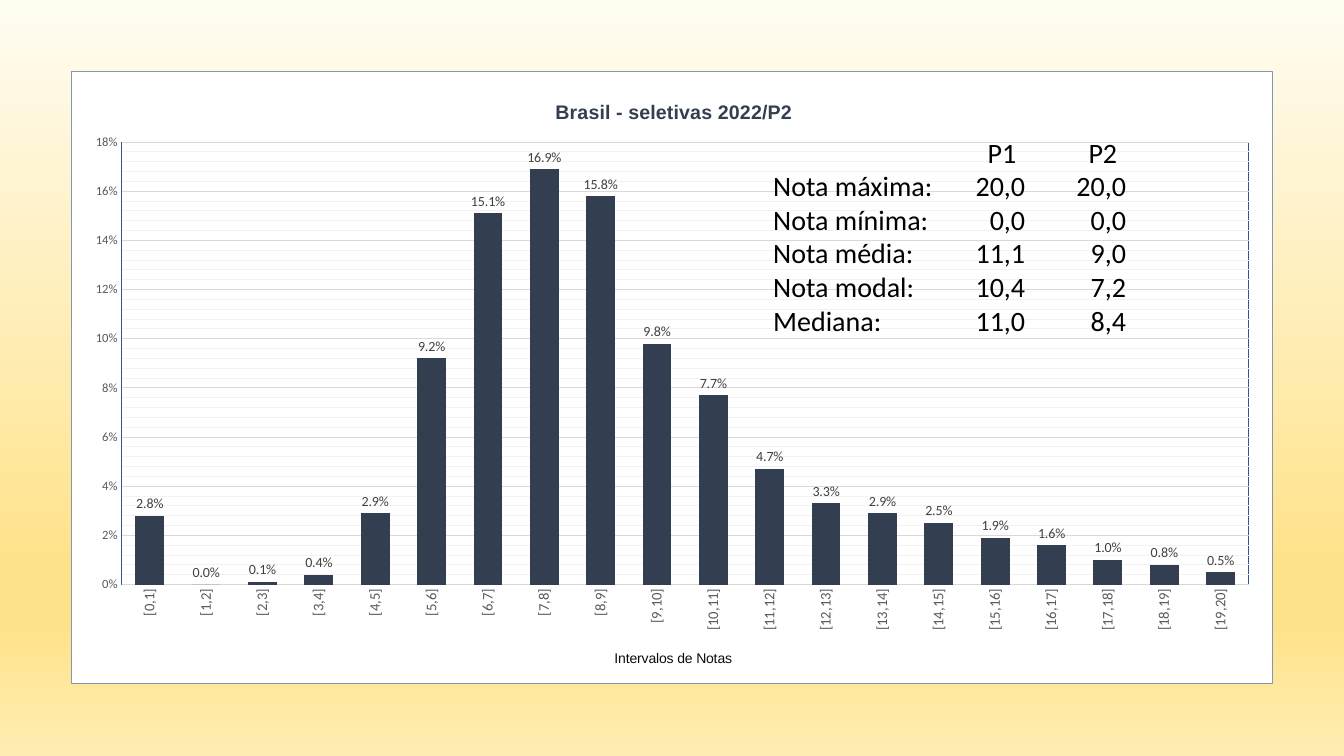
from typing import NamedTuple

import pptx
import pptx.chart.data
import pptx.dml.color
import pptx.enum.chart
import pptx.enum.text
import pptx.oxml
import pptx.oxml.ns
import pptx.util

Inches = pptx.util.Inches
Pt = pptx.util.Pt
qn = pptx.oxml.ns.qn

NAVY = "333F50"
GREY = "595959"
GRID = "D9D9D9"
PERCENTS = [2.8, 0, 0.1, 0.4, 2.9, 9.2, 15.1, 16.9, 15.8, 9.8,
            7.7, 4.7, 3.3, 2.9, 2.5, 1.9, 1.6, 1.0, 0.8, 0.5]


class Stop(NamedTuple):
    percent: int
    color: str


class Tab(NamedTuple):
    inches: float
    align: str


class Row(NamedTuple):
    label: str
    p1: str
    p2: str


SKY = [Stop(0, "FFFCF2"), Stop(74, "FFE38C"), Stop(83, "FFE38C"), Stop(100, "FFECB2")]
HEADER_TABS = [Tab(2.27, "ctr"), Tab(3.27, "ctr")]
VALUE_TABS = [Tab(2.5, "r"), Tab(3.5, "r")]
STATS = [
    Row("", "P1", "P2"),
    Row("Nota máxima:", "20,0", "20,0"),
    Row("Nota mínima:", "0,0", "0,0"),
    Row("Nota média:", "11,1", "9,0"),
    Row("Nota modal:", "10,4", "7,2"),
    Row("Mediana:", "11,0", "8,4"),
]


def rgb(color: str) -> pptx.dml.color.RGBColor:
    return pptx.dml.color.RGBColor.from_string(color)


def xml(text: str):
    """Parse one element, declaring the a: and c: namespaces on its first tag."""
    tag, rest = text.split(">", 1)
    return pptx.oxml.parse_xml(f"{tag} {pptx.oxml.ns.nsdecls('a', 'c')}>{rest}")


def style_font(font, size: float, color: str, name: str = "Calibri", bold: bool = False) -> None:
    font.size = Pt(size)
    font.name = name
    font.bold = bold
    font.color.rgb = rgb(color)


def style_line(line, color: str, width: float = 0.75) -> None:
    line.color.rgb = rgb(color)
    line.width = Pt(width)


def frame(fill: str, line: str):
    """Shape properties with a fill and a thin line, for chart parts."""
    return xml(f"<c:spPr>{fill}<a:ln w='9525'><a:solidFill><a:srgbClr val='{line}'/>"
               "</a:solidFill></a:ln></c:spPr>")


def layout(x: float, y: float, size: str = "", target: str = ""):
    return xml(f"<c:layout><c:manualLayout>{target}<c:xMode val='edge'/><c:yMode val='edge'/>"
               f"<c:x val='{x}'/><c:y val='{y}'/>{size}</c:manualLayout></c:layout>")


def remove_layout(parent) -> None:
    for old in parent.findall(qn("c:layout")):
        parent.remove(old)


def write_title(title, text: str, size: float, color: str, bold: bool, x: float, y: float) -> None:
    p = title.text_frame.paragraphs[0]
    p.text = text
    style_font(p.runs[0].font, size, color, "Arial", bold)
    element = title._element
    remove_layout(element)
    element.find(qn("c:tx")).addnext(layout(x, y))


def paint_background(slide) -> None:
    fill = slide.background.fill
    fill.gradient()
    fill.gradient_angle = 270
    stops = slide.background._cSld.find(".//" + qn("a:gsLst"))
    for old in list(stops):
        stops.remove(old)
    for stop in SKY:
        stops.append(xml(f"<a:gs pos='{stop.percent * 1000}'><a:srgbClr val='{stop.color}'/></a:gs>"))


def style_axes(chart) -> None:
    none = pptx.enum.chart.XL_TICK_MARK.NONE
    cat, val = chart.category_axis, chart.value_axis
    for axis, size in ((cat, 10.5), (val, 9)):
        axis.major_tick_mark = axis.minor_tick_mark = none
        style_font(axis.tick_labels.font, size, GREY)
    style_line(cat.format.line, GRID)
    cat._element.find(qn("c:txPr")).find(qn("a:bodyPr")).set("rot", "-5400000")
    write_title(cat.axis_title, "Intervalos de Notas", 10, "0D0D0D", False, 0.45, 0.94)

    val.minimum_scale, val.maximum_scale = 0, 0.18
    val.major_unit, val.minor_unit = 0.02, 0.004
    val.tick_labels.number_format = "0%"
    val.tick_labels.number_format_is_linked = False
    val.format.line.fill.background()
    style_line(val.major_gridlines.format.line, GRID)
    val.has_minor_gridlines = True
    val._element.find(qn("c:minorGridlines")).append(frame("", "F2F2F2"))


def add_histogram(slide) -> None:
    data = pptx.chart.data.CategoryChartData(number_format="0.0%")
    data.categories = [f"[{i},{i + 1}]" for i in range(len(PERCENTS))]
    data.add_series("Series 1", [round(v / 100, 3) for v in PERCENTS])
    chart = slide.shapes.add_chart(
        pptx.enum.chart.XL_CHART_TYPE.COLUMN_CLUSTERED,
        Inches(0.7), Inches(0.7), Inches(11.93), Inches(6.09), data).chart
    chart.has_legend = False
    style_font(chart.font, 10, "000000")
    chart.has_title = True
    write_title(chart.chart_title, "Brasil - seletivas 2022/P2", 14, NAVY, True, 0.4, 0.04)
    style_axes(chart)

    plot = chart.plots[0]
    plot.gap_width = 96
    plot.vary_by_categories = False
    fill = plot.series[0].format.fill
    fill.solid()
    fill.fore_color.rgb = rgb(NAVY)
    plot.has_data_labels = True
    labels = plot.data_labels
    labels.show_value = True
    labels.number_format = "0.0%"
    labels.number_format_is_linked = False
    labels.position = pptx.enum.chart.XL_LABEL_POSITION.OUTSIDE_END
    style_font(labels.font, 10, "404040")

    area = chart._chartSpace.find(qn("c:chart"))
    area.addnext(frame("<a:solidFill><a:srgbClr val='FFFFFF'/></a:solidFill>", "8497B0"))
    plot_area = area.find(qn("c:plotArea"))
    remove_layout(plot_area)
    plot_area.insert(0, layout(0.042, 0.116, "<c:w val='0.938'/><c:h val='0.722'/>",
                               "<c:layoutTarget val='inner'/>"))
    plot_area.append(frame("<a:noFill/>", "2F5597"))


def add_stats(slide) -> None:
    tf = slide.shapes.add_textbox(Inches(7.57), Inches(1.29), Inches(4.72), Inches(2.12)).text_frame
    tf.word_wrap = True
    tf.auto_size = pptx.enum.text.MSO_AUTO_SIZE.SHAPE_TO_FIT_TEXT
    tf.text = "\n".join("\t".join(row) for row in STATS)
    for i, p in enumerate(tf.paragraphs):
        tabs = VALUE_TABS if i else HEADER_TABS
        stops = "".join(f"<a:tab pos='{Inches(t.inches)}' algn='{t.align}'/>" for t in tabs)
        p._p.get_or_add_pPr().append(xml(f"<a:tabLst>{stops}</a:tabLst>"))
        for r in p.runs:
            style_font(r.font, 20, "000000")


def main() -> None:
    prs = pptx.Presentation()
    prs.slide_width, prs.slide_height = Inches(13.33), Inches(7.5)
    slide = prs.slides.add_slide(prs.slide_layouts[6])
    paint_background(slide)
    add_histogram(slide)
    add_stats(slide)
    prs.save("out.pptx")


if __name__ == "__main__":
    main()
